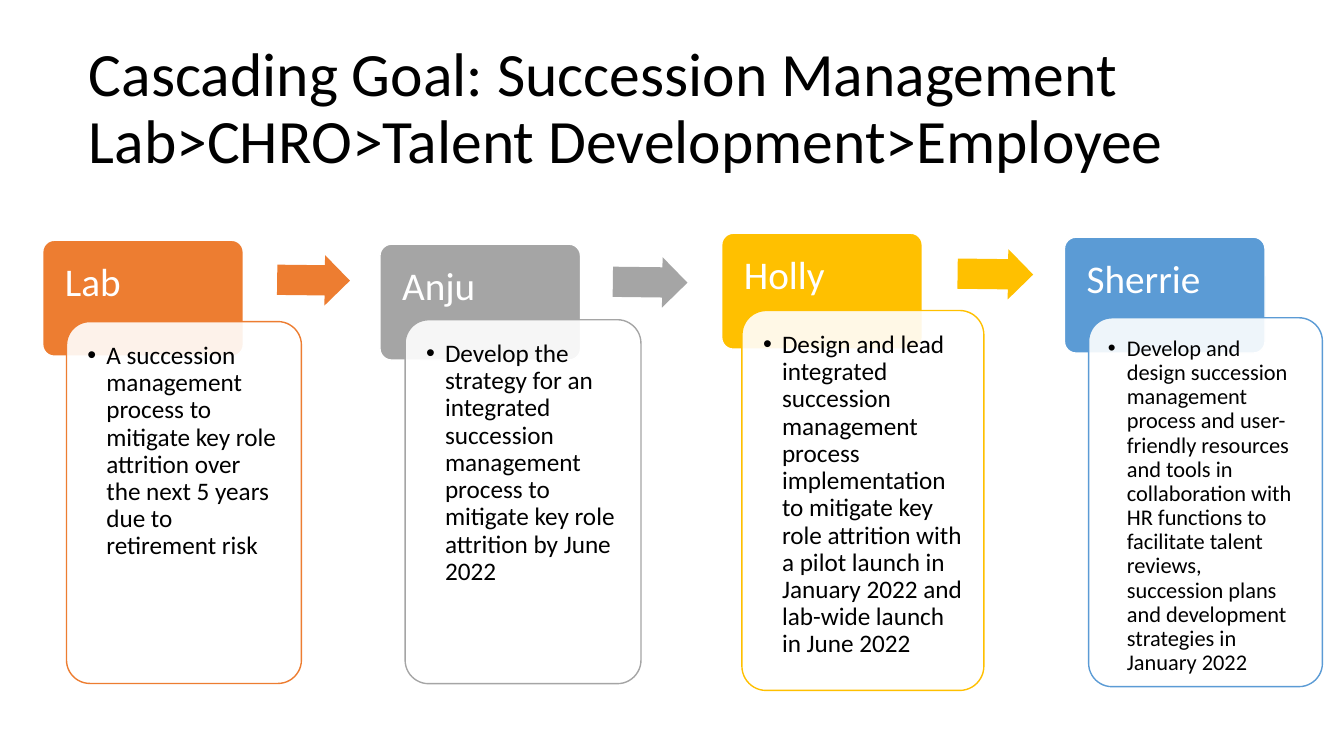
import pptx
import pptx.util
import pptx.dml.color
import pptx.enum.shapes
import pptx.enum.text
import pptx.oxml
import pptx.oxml.ns
from dataclasses import dataclass

Pt = pptx.util.Pt
Kind = pptx.enum.shapes.MSO_SHAPE
Anchor = pptx.enum.text.MSO_ANCHOR
Align = pptx.enum.text.PP_ALIGN


@dataclass
class Theme:
    font: str = "Calibri"
    ink: str = "000000"
    paper: str = "FFFFFF"
    orange: str = "ED7D31"
    gray: str = "A5A5A5"
    gold: str = "FFC000"
    blue: str = "5B9BD5"
    title: float = 44
    name: float = 28
    goal: float = 18
    small: float = 16


class Deck:
    def __init__(self, theme):
        self.theme = theme
        self.show = pptx.Presentation()
        self.show.slide_width, self.show.slide_height = Pt(960), Pt(540)
        self.slide = self.show.slides.add_slide(self.show.slide_layouts[5])

    def color(self, code):
        return pptx.dml.color.RGBColor.from_string(code)

    def label(self, frame, text, size, ink, anchor):
        frame.text = text
        frame.word_wrap = True
        frame.auto_size = pptx.enum.text.MSO_AUTO_SIZE.NONE
        frame.vertical_anchor = anchor
        line = frame.paragraphs[0]
        line.alignment = Align.LEFT
        line.line_spacing = 0.9
        for run in line.runs:
            run.font.name = self.theme.font
            run.font.size = Pt(size)
            run.font.color.rgb = self.color(ink)
        return line

    def pad(self, frame, gap):
        frame.margin_left = frame.margin_right = Pt(gap)
        frame.margin_top = frame.margin_bottom = Pt(gap)

    def title(self, text, box):
        shape = self.slide.shapes.title
        shape.left, shape.top, shape.width, shape.height = map(Pt, box)
        self.label(shape.text_frame, text, self.theme.title,
                   self.theme.ink, Anchor.MIDDLE)

    def shape(self, kind, box, fill, edge=None):
        shape = self.slide.shapes.add_shape(kind, *map(Pt, box))
        shape.shadow.inherit = False
        shape.fill.solid()
        shape.fill.fore_color.rgb = self.color(fill)
        if edge:
            shape.line.color.rgb = self.color(edge)
            shape.line.width = Pt(1)
        else:
            shape.line.fill.background()
        return shape

    def tab(self, text, left, top, fill):
        shape = self.shape(Kind.ROUNDED_RECTANGLE, (left, top, 143.3, 82.8),
                           fill, self.theme.paper)
        shape.adjustments[0] = 0.1
        self.pad(shape.text_frame, 13.5)
        self.label(shape.text_frame, text, self.theme.name,
                   self.theme.paper, Anchor.TOP)

    def card(self, text, box, edge, size):
        shape = self.shape(Kind.ROUNDED_RECTANGLE, box, self.theme.paper, edge)
        shape.adjustments[0] = 0.1
        # Slightly clear fill lets the tab show through
        tone = shape._element.spPr.find(".//" + pptx.oxml.ns.qn("a:srgbClr"))
        tone.append(self.node("alpha", 'val="90000"'))
        self.pad(shape.text_frame, size * 0.56)
        line = self.label(shape.text_frame, text, size,
                          self.theme.ink, Anchor.TOP)
        props = line._p.get_or_add_pPr()
        props.set("marL", str(Pt(13.5)))
        props.set("indent", str(-Pt(13.5)))
        props.append(self.node("buFont", 'typeface="Arial"'))
        props.append(self.node("buChar", 'char="•"'))

    def node(self, tag, attrs):
        space = pptx.oxml.ns.nsdecls("a")
        return pptx.oxml.parse_xml(f"<a:{tag} {space} {attrs}/>")

    def arrow(self, left, top, width, fill):
        shape = self.shape(Kind.RIGHT_ARROW, (left, top, width, 36), fill)
        shape.adjustments[0] = 0.6
        shape.adjustments[1] = 0.5
        shape.rotation = 0.7


def main():
    look = Theme()
    deck = Deck(look)
    deck.title("Cascading Goal: Succession Management\v"
               "Lab>CHRO>Talent Development>Employee",
               (56.2, 26.6, 866, 104.4))

    # Name, colour, tab corner, card box, goal size, goal, arrow to the next
    steps = [
        ("Lab", look.orange, (30.5, 171.6), (47.5, 229.7, 167.8, 258.5),
         look.goal,
         "A succession management process to mitigate key role attrition "
         "over the next 5 years due to retirement risk",
         (198, 182.2, 52)),
        ("Anju", look.gray, (271.4, 174.4), (289.4, 228.4, 168.5, 260),
         look.goal,
         "Develop the strategy for an integrated succession management "
         "process to mitigate key role attrition by June 2022",
         (437.8, 183.6, 53.3)),
        ("Holly", look.gold, (515.5, 166.6), (530, 221.8, 172.8, 271.4),
         look.goal,
         "Design and lead integrated succession management process "
         "implementation to mitigate key role attrition with a pilot launch "
         "in January 2022 and lab-wide launch in June 2022",
         (684, 177.8, 54)),
        ("Sherrie", look.blue, (760.3, 169.4), (777.6, 227, 167, 263.5),
         look.small,
         "Develop and design succession management process and user-friendly "
         "resources and tools in collaboration with HR functions to "
         "facilitate talent reviews, succession plans and development "
         "strategies in January 2022",
         None),
    ]
    for name, hue, spot, box, size, goal, arrow in steps:
        deck.tab(name, *spot, hue)
        deck.card(goal, box, hue, size)
        if arrow:
            deck.arrow(*arrow, hue)

    deck.show.save("out.pptx")


if __name__ == "__main__":
    main()
